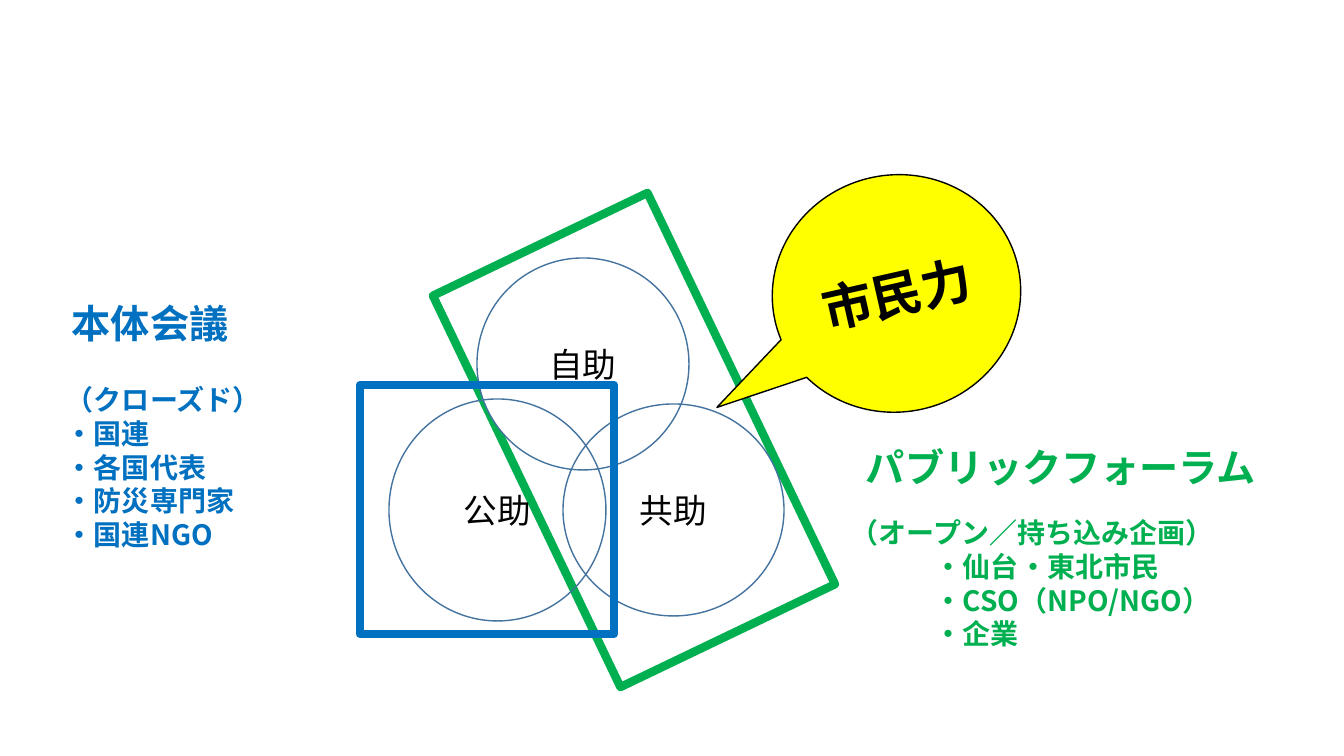
from dataclasses import dataclass

from lxml import etree
from pptx import Presentation
from pptx.dml.color import RGBColor
from pptx.enum.shapes import MSO_SHAPE
from pptx.enum.text import MSO_ANCHOR, PP_ALIGN
from pptx.oxml.ns import qn
from pptx.util import Pt

EMU_PER_PX = 914400 / 100.8
RECTANGLE = MSO_SHAPE.RECTANGLE
CIRCLE = MSO_SHAPE.FLOWCHART_CONNECTOR
BALLOON = MSO_SHAPE.OVAL_CALLOUT
MIDDLE, TOP = MSO_ANCHOR.MIDDLE, MSO_ANCHOR.TOP
CENTER, LEFT = PP_ALIGN.CENTER, PP_ALIGN.LEFT


@dataclass(frozen=True)
class Theme:
    font: str = "Noto Sans CJK JP"
    conference: str = "0070C0"
    forum: str = "00B050"
    outline: str = "43739E"
    highlight: str = "FFFF00"
    paper: str = "FFFFFF"
    ink: str = "000000"
    list_size: int = 20
    circle_size: int = 24
    heading_size: int = 28
    balloon_size: int = 36
    thin: int = 1
    thick: int = 6


THEME = Theme()


def px(length):
    return round(length * EMU_PER_PX)


def emu_box(box):
    return [px(length) for length in box]


def write(frame, text, size, color, bold=False, align=LEFT, anchor=TOP,
          leading=None, indent=0):
    """Fill a text frame, one paragraph a line; indent applies after the first."""
    frame.word_wrap = True
    frame.vertical_anchor = anchor
    for number, line in enumerate(text.split("\n")):
        paragraph = frame.add_paragraph() if number else frame.paragraphs[0]
        paragraph.alignment = align
        if leading:
            paragraph.line_spacing = Pt(leading)
        if number and indent:
            properties = paragraph._p.get_or_add_pPr()
            properties.set("marL", str(px(indent)))
            properties.set("indent", "0")
        run = paragraph.add_run()
        run.text = line
        font = run.font
        font.size, font.bold, font.name = Pt(size), bold, THEME.font
        font.color.rgb = RGBColor.from_string(color)
        east_asian = etree.SubElement(run._r.get_or_add_rPr(), qn("a:ea"))
        east_asian.set("typeface", THEME.font)


def add_outline(slide, kind, box, color, width, fill=None, rotation=0):
    shape = slide.shapes.add_shape(kind, *emu_box(box))
    shape.shadow.inherit = False
    shape.rotation = rotation
    shape.line.color.rgb = RGBColor.from_string(color)
    shape.line.width = Pt(width)
    if fill:
        shape.fill.solid()
        shape.fill.fore_color.rgb = RGBColor.from_string(fill)
    else:
        shape.fill.background()
    return shape


def add_text(slide, box, text, size, color, indent=0):
    frame = slide.shapes.add_textbox(*emu_box(box)).text_frame
    write(frame, text, size, color, bold=True, leading=round(size * 1.2),
          indent=indent)


def add_help_circles(slide, box):
    """Three overlapping kinds of help, framed by the two venues."""
    x, y, width, height = box
    add_outline(slide, RECTANGLE, (x + 155, y, 238, height), THEME.forum,
                THEME.thick, rotation=334.4)
    circles = [
        ("自助", (x + 117, y + 35, 212, 212), THEME.paper),
        ("公助", (x + 29, y + 176, 217, 222), None),
        ("共助", (x + 203, y + 181, 221, 212), None),
    ]
    for label, circle_box, fill in circles:
        circle = add_outline(slide, CIRCLE, circle_box, THEME.outline,
                             THEME.thin, fill)
        write(circle.text_frame, label, THEME.circle_size, THEME.ink,
              align=CENTER, anchor=MIDDLE)
    add_outline(slide, RECTANGLE, (x, y + 162, 254, 249), THEME.conference,
                THEME.thick)


def add_citizen_balloon(slide, box):
    balloon = add_outline(slide, BALLOON, box, THEME.ink, THEME.thin,
                          THEME.highlight, rotation=347.2)
    balloon.adjustments[0], balloon.adjustments[1] = -0.805, 0.301
    write(balloon.text_frame, "市民力", THEME.balloon_size, THEME.ink,
          bold=True, align=CENTER, anchor=MIDDLE)


def add_venue(slide, box, heading, members, color, heading_shift, list_drop,
              indent=0):
    x, y, width, height = box
    add_text(slide, (x + heading_shift, y, width - heading_shift, 57),
             heading, THEME.heading_size, color)
    add_text(slide, (x, y + list_drop, width, height - list_drop),
             members, THEME.list_size, color, indent)


def main():
    presentation = Presentation()
    presentation.slide_width, presentation.slide_height = px(1344), px(756)
    slide = presentation.slides.add_slide(presentation.slide_layouts[6])
    add_help_circles(slide, (360, 223, 424, 434))
    add_citizen_balloon(slide, (772, 175, 249, 237))
    add_venue(slide, (56, 294, 248, 298), "本体会議",
              "（クローズド）\n・国連\n・各国代表\n・防災専門家\n・国連NGO",
              THEME.conference, heading_shift=6, list_drop=84)
    add_venue(slide, (841, 438, 476, 219), "パブリックフォーラム",
              "（オープン／持ち込み企画）\n・仙台・東北市民\n"
              "・CSO（NPO/NGO）\n・企業",
              THEME.forum, heading_shift=15, list_drop=73, indent=84)
    presentation.save("out.pptx")


if __name__ == "__main__":
    main()
